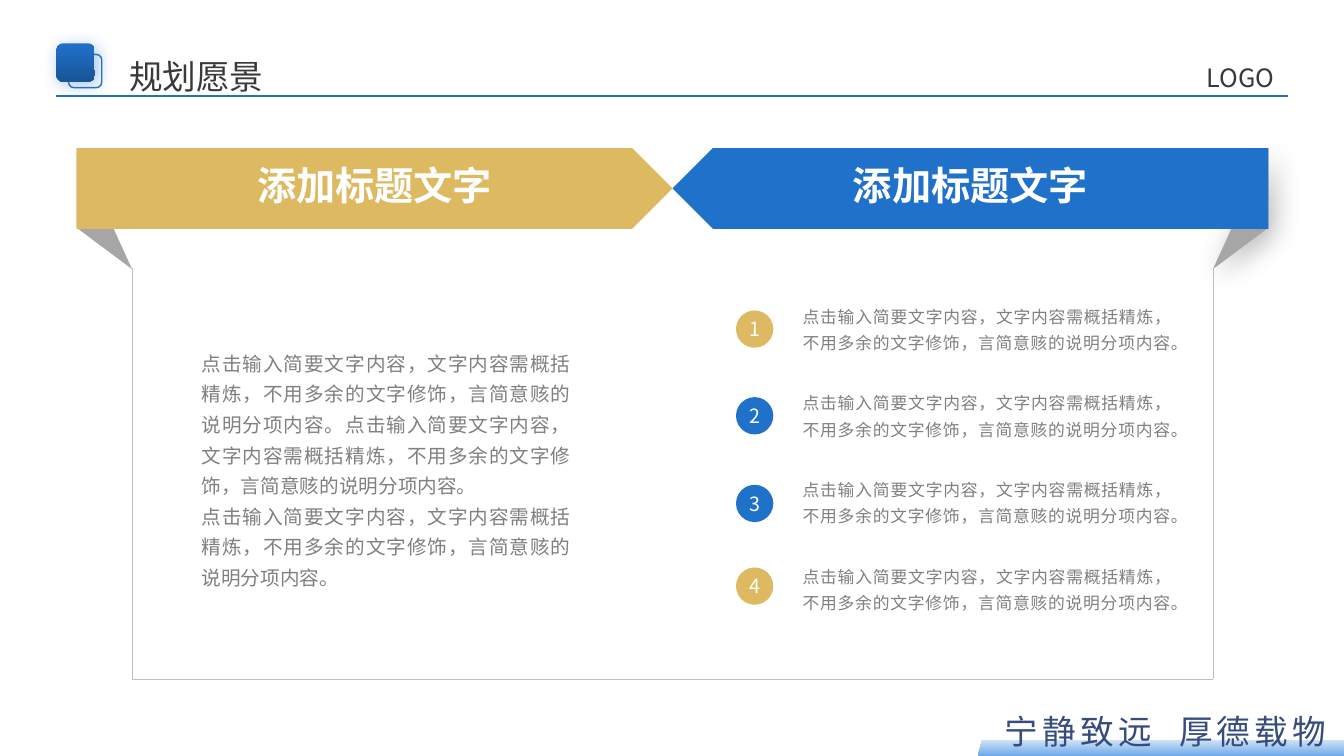
from lxml import etree
from pptx import Presentation
from pptx.dml.color import RGBColor
from pptx.enum.shapes import MSO_CONNECTOR, MSO_SHAPE
from pptx.enum.text import MSO_ANCHOR, MSO_AUTO_SIZE, PP_ALIGN
from pptx.oxml.ns import qn
from pptx.util import Inches, Pt

STRAIGHT = MSO_CONNECTOR.STRAIGHT
ROUNDED, RIBBON, OVAL, SLANTED = (MSO_SHAPE.ROUNDED_RECTANGLE, MSO_SHAPE.PENTAGON,
                                  MSO_SHAPE.OVAL, MSO_SHAPE.PARALLELOGRAM)
TOP, MIDDLE = MSO_ANCHOR.TOP, MSO_ANCHOR.MIDDLE
CENTER, JUSTIFY = PP_ALIGN.CENTER, PP_ALIGN.JUSTIFY
NO_AUTOFIT = MSO_AUTO_SIZE.NONE

FONT = "Noto Sans CJK SC"
COLORS = {
    "blue": "2071CA", "deep": "185598", "gold": "DDBA61", "pale": "CFE2F7",
    "sky": "70A9E8", "navy": "364C7D", "dark": "3B3838", "text": "808080",
    "fold": "A6A6A6", "border": "BFBFBF", "white": "FFFFFF", "black": "000000",
}
SUMMARY = "点击输入简要文字内容，文字内容需概括精炼，不用多余的文字修饰，言简意赅的说明分项内容。"
HEADING = "添加标题文字"
# Each point: badge colour and badge offset below the top of its row
POINTS = [("gold", 0.1), ("blue", 0.1), ("blue", 0.11), ("gold", 0.07)]


def rgb(name):
    return RGBColor.from_string(COLORS[name])


def write(shape, paragraphs, size, color, align=JUSTIFY, bold=False, spacing=None,
          tracking=None, anchor=TOP, insets=(0, 0, 0, 0)):
    frame = shape.text_frame
    frame.word_wrap = True
    frame.auto_size = NO_AUTOFIT
    frame.vertical_anchor = anchor
    (frame.margin_left, frame.margin_top,
     frame.margin_right, frame.margin_bottom) = map(Inches, insets)
    for index, text in enumerate(paragraphs):
        paragraph = frame.add_paragraph() if index else frame.paragraphs[0]
        paragraph.alignment = align
        paragraph.space_before = Pt(0)
        if spacing:
            paragraph.line_spacing = spacing
        run = paragraph.add_run()
        run.text = text
        run.font.name = FONT
        run.font.size = Pt(size)
        run.font.bold = bold
        run.font.color.rgb = rgb(color)
        properties = run._r.get_or_add_rPr()
        etree.SubElement(properties, qn("a:ea"), typeface=FONT)
        if tracking:
            properties.set("spc", str(tracking * 100))


def add_text(slide, left, top, width, height, text, size, color, **style):
    box = slide.shapes.add_textbox(*map(Inches, (left, top, width, height)))
    write(box, [text], size, color, **style)


def place(shape, left, top, width, height):
    shape.left, shape.top, shape.width, shape.height = map(
        Inches, (left, top, width, height))


def paint(shape, fill=None, line=None):
    shape.shadow.inherit = False
    if isinstance(fill, tuple):
        shape.fill.gradient()
        shape.fill.gradient_angle = 270
        for stop, color in zip(shape.fill.gradient_stops, fill):
            stop.color.rgb = rgb(color)
    elif fill:
        shape.fill.solid()
        shape.fill.fore_color.rgb = rgb(fill)
    else:
        shape.fill.background()
    if line:
        shape.line.color.rgb = rgb(line)
        shape.line.width = Pt(1)
    else:
        shape.line.fill.background()


def add_shape(slide, kind, left, top, width, height, fill=None, line=None):
    shape = slide.shapes.add_shape(kind, *map(Inches, (left, top, width, height)))
    paint(shape, fill, line)
    return shape


def add_shadow(shape, color, alpha, blur, distance):
    effects = shape._element.spPr.find(qn("a:effectLst"))
    shadow = etree.SubElement(effects, qn("a:outerShdw"), blurRad=str(Pt(blur)),
                              dist=str(Pt(distance)), dir="2700000",
                              algn="tl", rotWithShape="0")
    tint = etree.SubElement(shadow, qn("a:srgbClr"), val=COLORS[color])
    etree.SubElement(tint, qn("a:alpha"), val=str(alpha * 1000))


def add_line(slide, x1, y1, x2, y2, color, width):
    line = slide.shapes.add_connector(STRAIGHT, *map(Inches, (x1, y1, x2, y2)))
    line.line.color.rgb = rgb(color)
    line.line.width = Pt(width)
    etree.SubElement(line._element.spPr, qn("a:effectLst"))


def build_header(slide, left, top, width):
    """Title row with its square mark, label and rule."""
    rule = top + 0.52
    add_line(slide, left, rule, left + width, rule, "blue", 1.5)
    add_shape(slide, ROUNDED, left + 0.12, top + 0.11, 0.33, 0.33, line="blue")
    mark = add_shape(slide, ROUNDED, left, top, 0.38, 0.38, fill=("blue", "deep"))
    add_shadow(mark, "blue", 40, 12, 3)
    add_text(slide, left + width - 0.8, top + 0.19, 0.8, 0.3, "LOGO", 18, "dark")
    title = slide.shapes.title
    place(title, left + 0.72, top + 0.12, 1.48, 0.4)
    write(title, ["规划愿景"], 24, "dark")


def build_footer(slide, left, top):
    """Motto over a slanted band."""
    add_shape(slide, SLANTED, left + 0.15, top + 0.34, 4.15, 0.16, fill=("pale", "sky"))
    for index, motto in enumerate(["宁静致远", "厚德载物"]):
        add_text(slide, left + index * 1.73, top, 2.29, 0.5, motto, 24, "navy",
                 align=CENTER, tracking=3, insets=(0.1, 0.05, 0.1, 0.05))


def build_panel(slide, left, top, width, height, color, mirrored=False):
    """Ribbon heading with a folded end and half of the frame below."""
    outer, tip = (left + width, left) if mirrored else (left, left + width)
    inner = outer - 0.55 if mirrored else outer + 0.55
    bottom = top + height
    # Folded end
    builder = slide.shapes.build_freeform(Inches(outer), Inches(top))
    builder.add_line_segments([(Inches(inner), Inches(top + 1.2)),
                               (Inches(outer), Inches(top + 0.79))], close=True)
    fold = builder.convert_to_shape()
    paint(fold, "fold")
    if mirrored:
        add_shadow(fold, "black", 30, 20, 5)
    # Frame
    add_line(slide, inner, top + 1.19, inner, bottom, "border", 0.5)
    add_line(slide, inner, bottom, tip, bottom, "border", 0.5)
    # Ribbon and heading
    ribbon = add_shape(slide, RIBBON, left, top, width, 0.8, fill=color)
    if mirrored:
        ribbon._element.spPr.find(qn("a:xfrm")).set("flipH", "1")
    add_text(slide, left + (width - 3.2) / 2, top + 0.08, 3.2, 0.57, HEADING, 28,
             "white", align=CENTER, bold=True, insets=(0.1, 0.05, 0.1, 0.05))


def build_description(slide, left, top, width, height):
    """Body text of the left panel."""
    body = slide.placeholders[1]
    place(body, left, top, width, height)
    write(body, [SUMMARY * 2, SUMMARY], 14, "text", spacing=1.3, insets=(0, 0.3, 0, 0))
    for paragraph in body.text_frame.paragraphs:
        properties = paragraph._p.get_or_add_pPr()
        properties.set("marL", "0")
        properties.set("indent", "0")
        etree.SubElement(properties, qn("a:buNone"))


def build_points(slide, left, top, pitch):
    """Numbered points of the right panel."""
    for index, (color, offset) in enumerate(POINTS):
        row = top + index * pitch
        badge = add_shape(slide, OVAL, left, row + offset, 0.37, 0.37, fill=color)
        write(badge, [str(index + 1)], 14, "white", align=CENTER, anchor=MIDDLE)
        add_text(slide, left + 0.66, row, 3.66, 0.5, SUMMARY, 12, "text", spacing=1.3)


def main():
    presentation = Presentation()
    presentation.slide_width = Inches(13.33)
    presentation.slide_height = Inches(7.5)
    slide = presentation.slides.add_slide(presentation.slide_layouts[1])
    build_header(slide, 0.56, 0.43, 12.21)
    build_footer(slide, 9.55, 7)
    build_panel(slide, 6.67, 1.47, 5.91, 5.27, "blue", mirrored=True)
    build_panel(slide, 0.76, 1.47, 5.91, 5.27, "gold")
    build_description(slide, 2, 3.12, 3.66, 3.06)
    build_points(slide, 7.3, 2.98, 0.86)
    presentation.save("out.pptx")


if __name__ == "__main__":
    main()
